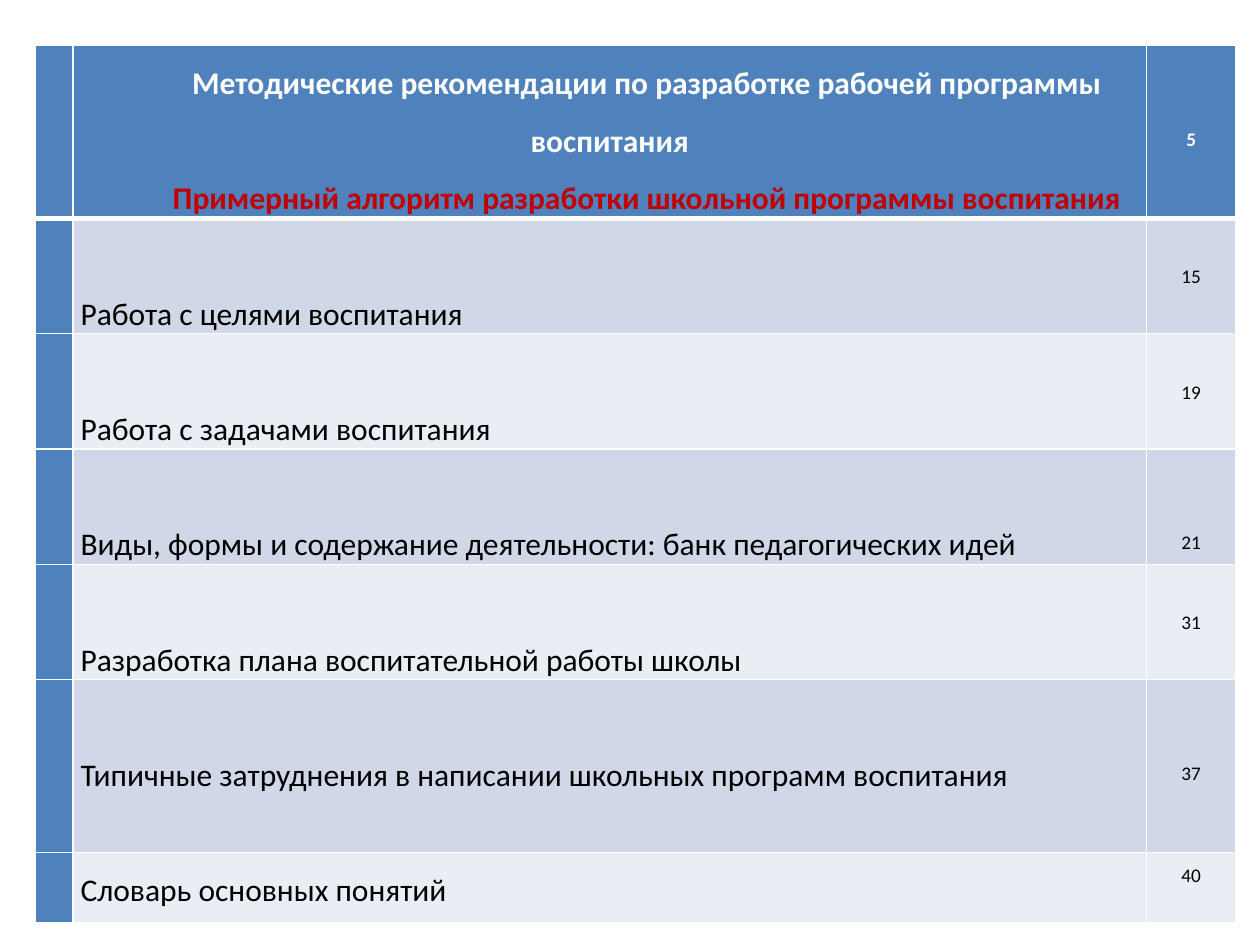
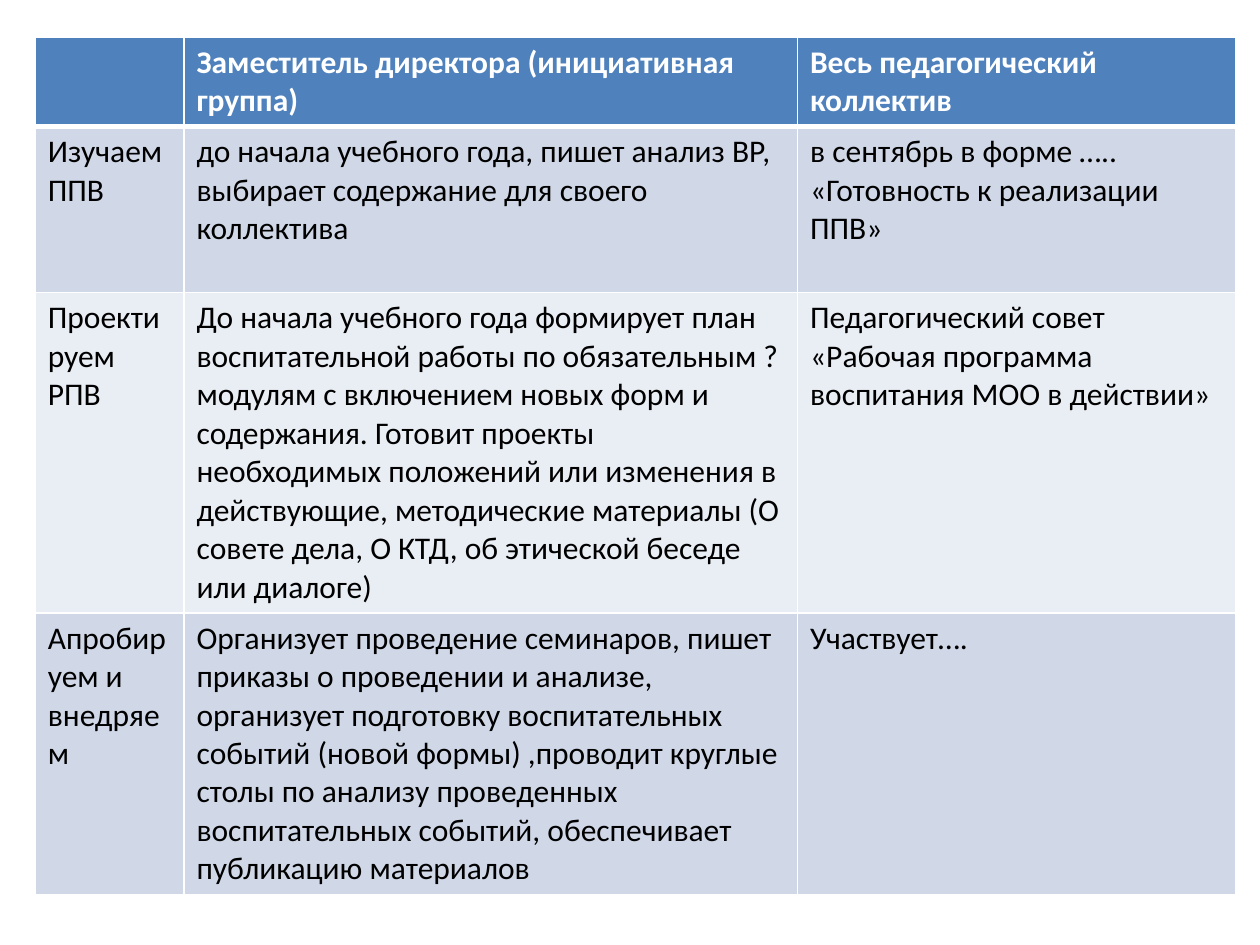
from lxml import etree
from pptx import Presentation
from pptx import util as u
from pptx.dml.color import RGBColor
from pptx.enum import text
from pptx.oxml.ns import qn

COLORS = {
    "header": "4F81BD",
    "band_dark": "D0D8E8",
    "band_light": "E9EDF4",
    "border": "FFFFFF",
    "header_text": "FFFFFF",
    "body_text": "000000",
    "accent": "C00000",
}
FONT = "Calibri"
TEXT_SIZE, PAGE_SIZE = 18, 11
LINE_RATIO = 1.22  # height of a single-spaced Calibri line against its size
CONTENTS_SPACING = 1.5
CELL_PAD = 0.05
SLIDE_W, SLIDE_H = 10, 7.5
TABLE_LEFT, TABLE_WIDTH = 0.028, 0.953  # shares of the slide's width

CONTENTS_TITLE = [
    "Методические рекомендации по разработке рабочей программы воспитания",
    "Примерный алгоритм разработки школьной программы воспитания",
]
# topic, page, row height in text lines, lines above topic, lines above page
CONTENTS = [
    ("Работа с целями воспитания", "15", 2, 1, 1),
    ("Работа с задачами воспитания", "19", 2, 1, 1),
    ("Виды, формы и содержание деятельности: банк педагогических идей",
     "21", 2, 1, 2),
    ("Разработка плана воспитательной работы школы", "31", 2, 1, 1),
    ("Типичные затруднения в написании школьных программ воспитания",
     "37", 3, 1, 2),
    ("Словарь основных понятий", "40", 1.22, 0, 0),
]

STAGE_LINES = [2, 4, 8, 7]
STAGES = [
    ("", "Заместитель директора (инициативная группа)",
     "Весь педагогический коллектив"),
    ("Изучаем ППВ",
     "до начала учебного года, пишет анализ ВР, выбирает содержание "
     "для своего коллектива",
     "в сентябрь в форме ….. «Готовность к реализации ППВ»"),
    ("Проектируем РПВ",
     "До начала учебного года формирует план воспитательной работы по "
     "обязательным ? модулям с включением новых форм и содержания. Готовит "
     "проекты необходимых положений или изменения в действующие, методические "
     "материалы (О совете дела, О КТД, об этической беседе или диалоге)",
     "Педагогический совет «Рабочая программа воспитания МОО в действии»"),
    ("Апробируем и внедряем",
     "Организует проведение семинаров, пишет приказы о проведении и анализе, "
     "организует подготовку воспитательных событий (новой формы) ,проводит "
     "круглые столы по анализу проведенных воспитательных событий, "
     "обеспечивает публикацию материалов",
     "Участвует…."),
]


def line_height(size, spacing=1):
    """Height of one line of text in inches."""
    return size * LINE_RATIO * spacing / 72


def set_borders(cell, top, bottom):
    tcPr = cell._tc.get_or_add_tcPr()
    for side, width in zip("LRTB", (1, 1, top, bottom)):
        ln = etree.SubElement(tcPr, qn(f"a:ln{side}"), w=str(u.Pt(width)))
        fill = etree.SubElement(ln, qn("a:solidFill"))
        etree.SubElement(fill, qn("a:srgbClr"), val=COLORS["border"])


def add_banded_table(s, top, col_widths, row_heights, header_column=False):
    """Place a table at a share of the slide's height, with a header and bands."""
    left, width = TABLE_LEFT * SLIDE_W, TABLE_WIDTH * SLIDE_W
    frame = s.shapes.add_table(
        len(row_heights), len(col_widths), u.Inches(left),
        u.Inches(top * SLIDE_H), u.Inches(width), u.Inches(sum(row_heights)))
    table = frame.table
    for column, share in zip(table.columns, col_widths):
        column.width = u.Inches(width * share / sum(col_widths))
    for i, (row, height) in enumerate(zip(table.rows, row_heights)):
        row.height = u.Inches(height)
        band = "band_dark" if i % 2 else "band_light"
        for j, cell in enumerate(row.cells):
            set_borders(cell, 3 if i == 1 else 1, 3 if i == 0 else 1)
            is_header = i == 0 or (header_column and j == 0)
            cell.fill.solid()
            cell.fill.fore_color.rgb = RGBColor.from_string(
                COLORS["header" if is_header else band])
    return table


def write_cell(cell, lines, size=TEXT_SIZE, header=False, align=None, spacing=None):
    tf = cell.text_frame
    tf.text = "\n".join(lines)
    for p in tf.paragraphs:
        p.alignment = align
        p.line_spacing = spacing
        for r in p.runs:
            r.font.name = FONT
            r.font.size = u.Pt(size)
            r.font.bold = header
            r.font.color.rgb = RGBColor.from_string(
                COLORS["header_text" if header else "body_text"])


def write_contents_cell(cell, lines, size, skip, align, header=False):
    """Write a cell whose text starts the given number of lines down."""
    write_cell(cell, lines, size, header, align, CONTENTS_SPACING)
    cell.margin_left = cell.margin_right = u.Inches(0.06)
    cell.margin_top = u.Inches(skip * line_height(size, CONTENTS_SPACING))
    cell.margin_bottom = 0


def contents_slide(prs):
    s = prs.slides.add_slide(prs.slide_layouts[6])
    line = line_height(TEXT_SIZE, CONTENTS_SPACING)
    heights = [3 * line] + [entry[2] * line for entry in CONTENTS]
    table = add_banded_table(s, 0.048, (0.3, 8.52, 0.71), heights, header_column=True)

    center, justify = text.PP_ALIGN.CENTER, text.PP_ALIGN.JUSTIFY
    title = table.cell(0, 1)
    write_contents_cell(title, CONTENTS_TITLE, TEXT_SIZE, 0, center, header=True)
    for p in title.text_frame.paragraphs:
        p._p.get_or_add_pPr().set("indent", str(u.Inches(0.59)))
    subtitle = title.text_frame.paragraphs[1].runs[0]
    subtitle.font.color.rgb = RGBColor.from_string(COLORS["accent"])
    write_contents_cell(table.cell(0, 2), ["5"], PAGE_SIZE, 2, center, header=True)

    for i, (topic, page, _, topic_skip, page_skip) in enumerate(CONTENTS, 1):
        write_contents_cell(table.cell(i, 1), [topic], TEXT_SIZE, topic_skip, justify)
        write_contents_cell(table.cell(i, 2), [page], PAGE_SIZE, page_skip, center)


def stages_slide(prs):
    s = prs.slides.add_slide(prs.slide_layouts[6])
    heights = [n * line_height(TEXT_SIZE) + 2 * CELL_PAD for n in STAGE_LINES]
    table = add_banded_table(s, 0.039, (1.18, 4.87, 3.48), heights)
    for i, stage in enumerate(STAGES):
        for j, wording in enumerate(stage):
            write_cell(table.cell(i, j), [wording], header=i == 0)


def main():
    prs = Presentation()
    prs.slide_width, prs.slide_height = u.Inches(SLIDE_W), u.Inches(SLIDE_H)
    contents_slide(prs)
    stages_slide(prs)
    prs.save("out.pptx")


if __name__ == "__main__":
    main()
